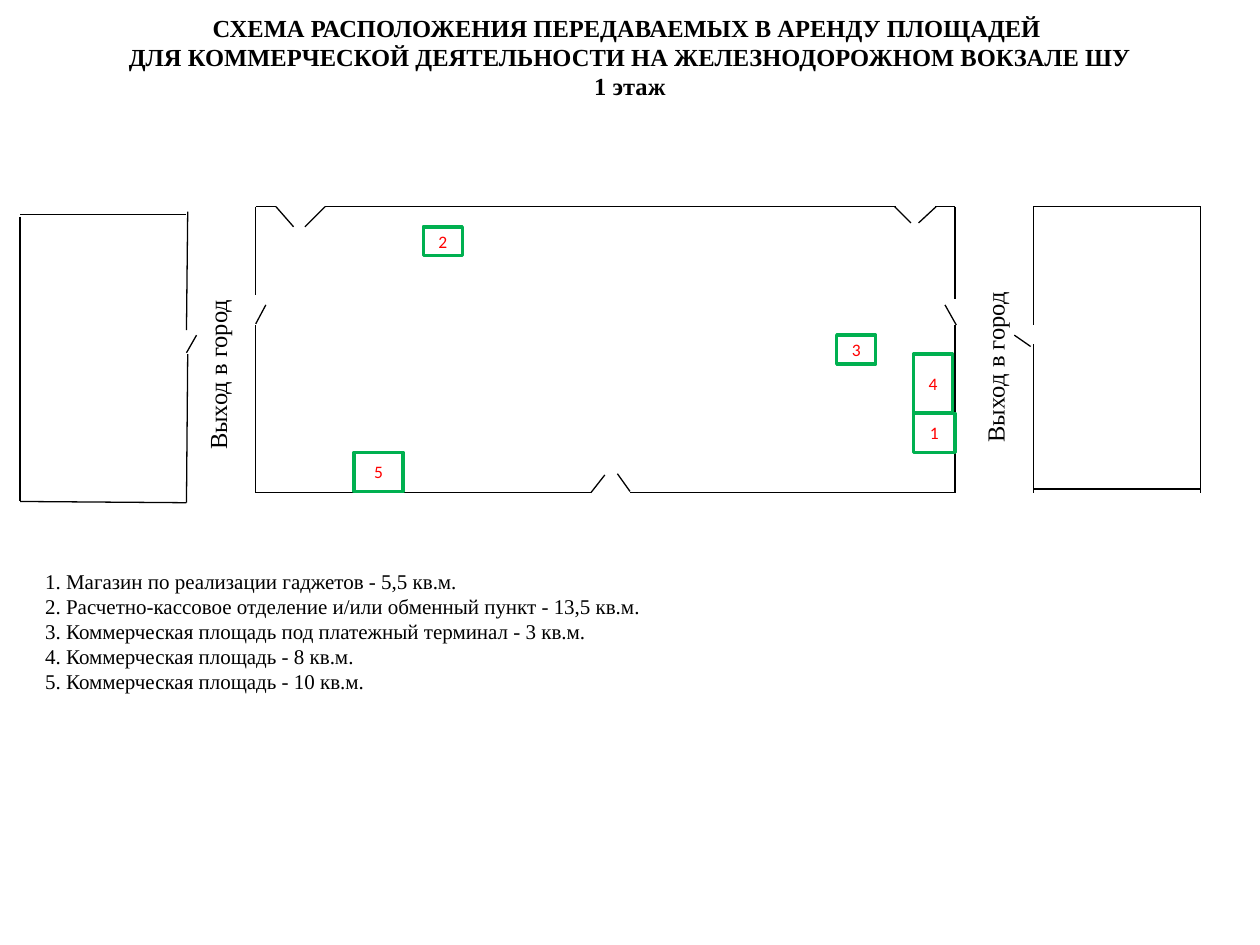
from typing import NamedTuple

from lxml import etree
from pptx import Presentation
from pptx import util as u
from pptx.dml.color import RGBColor
from pptx.enum import shapes, text
from pptx.oxml import ns

BLACK = RGBColor(0x00, 0x00, 0x00)
WHITE = RGBColor(0xFF, 0xFF, 0xFF)
GREEN = RGBColor(0x00, 0xB0, 0x50)
RED = RGBColor(0xFF, 0x00, 0x00)
SERIF = "Times New Roman"


class Wall(NamedTuple):
    x1: float
    y1: float
    x2: float
    y2: float


class Box(NamedTuple):
    left: float
    top: float
    width: float
    height: float


class Unit(NamedTuple):
    label: str
    box: Box


LEFT_ROOM = [
    Wall(0.16, 1.7, 1.48, 1.7),
    Wall(0.16, 1.72, 0.16, 3.98),
    Wall(0.16, 3.98, 1.48, 3.99),
    Wall(1.49, 1.68, 1.48, 2.62),
    Wall(1.49, 2.81, 1.48, 3.99),
    Wall(1.56, 2.66, 1.48, 2.8),
]
HALL = [
    Wall(2.03, 3.91, 4.69, 3.91),
    Wall(5, 3.91, 7.58, 3.91),
    Wall(2.03, 2.58, 2.03, 3.91),
    Wall(2.11, 2.42, 2.03, 2.57),
    Wall(2.03, 1.64, 2.03, 2.34),
    Wall(2.03, 1.64, 2.19, 1.64),
    Wall(7.58, 2.58, 7.58, 3.91),
    Wall(7.5, 2.42, 7.59, 2.58),
    Wall(7.58, 1.64, 7.58, 2.37),
    Wall(7.42, 1.64, 7.58, 1.64),
    Wall(2.33, 1.8, 2.19, 1.64),
    Wall(7.23, 1.77, 7.1, 1.64),
    Wall(2.58, 1.64, 2.42, 1.8),
    Wall(2.58, 1.64, 7.11, 1.64),
    Wall(7.29, 1.77, 7.43, 1.64),
    Wall(5, 3.9, 4.9, 3.76),
    Wall(4.69, 3.91, 4.8, 3.77),
]
RIGHT_ROOM = [
    Wall(8.2, 1.64, 9.53, 1.64),
    Wall(9.53, 1.64, 9.53, 3.91),
    Wall(8.2, 3.88, 9.53, 3.88),
    Wall(8.2, 1.64, 8.2, 2.58),
    Wall(8.2, 2.73, 8.2, 3.91),
    Wall(8.05, 2.66, 8.18, 2.75),
]
EXITS = [Box(1.56, 1.87, 0.44, 1.8), Box(7.73, 1.81, 0.44, 1.8)]
UNITS = [
    Unit("3", Box(6.64, 2.66, 0.31, 0.23)),
    Unit("1", Box(7.25, 3.28, 0.33, 0.31)),
    Unit("2", Box(3.36, 1.8, 0.31, 0.23)),
    Unit("4", Box(7.25, 2.81, 0.31, 0.47)),
    Unit("5", Box(2.81, 3.59, 0.39, 0.31)),
]
TITLE = [
    "СХЕМА РАСПОЛОЖЕНИЯ ПЕРЕДАВАЕМЫХ В АРЕНДУ ПЛОЩАДЕЙ ",
    "ДЛЯ КОММЕРЧЕСКОЙ ДЕЯТЕЛЬНОСТИ НА ЖЕЛЕЗНОДОРОЖНОМ ВОКЗАЛЕ ШУ",
    "1 этаж",
]
LEGEND = [
    "1. Магазин по реализации гаджетов - 5,5 кв.м.",
    "2. Расчетно-кассовое отделение и/или обменный пункт - 13,5 кв.м.",
    "3. Коммерческая площадь под платежный терминал - 3 кв.м.",
    "4. Коммерческая площадь - 8 кв.м.",
    "5. Коммерческая площадь - 10 кв.м.",
]


def place(box: Box) -> list:
    return [u.Inches(side) for side in box]


def write(frame, lines, size=12, font=SERIF, color=BLACK, bold=False,
          align=text.PP_ALIGN.LEFT, wrap=True) -> None:
    frame.word_wrap = wrap
    for i, line in enumerate(lines):
        para = frame.add_paragraph() if i else frame.paragraphs[0]
        para.alignment = align
        run = para.add_run()
        run.text = line
        run.font.size = u.Pt(size)
        run.font.name = font
        run.font.bold = bold
        run.font.color.rgb = color


def add_wall(slide, wall: Wall) -> None:
    line = slide.shapes.add_connector(
        shapes.MSO_CONNECTOR.STRAIGHT, *[u.Inches(end) for end in wall])
    line.line.color.rgb = BLACK
    line.line.width = u.Pt(0.75)
    etree.SubElement(line._element.spPr, ns.qn("a:effectLst"))


def add_text(slide, box: Box, lines, turned=False, **style) -> None:
    frame = slide.shapes.add_textbox(*place(box)).text_frame
    if turned:
        frame._txBody.bodyPr.set("vert", "vert270")
    write(frame, lines, **style)


def add_unit(slide, unit: Unit) -> None:
    shape = slide.shapes.add_shape(
        shapes.MSO_SHAPE.RECTANGLE, *place(unit.box))
    shape.shadow.inherit = False
    shape.fill.solid()
    shape.fill.fore_color.rgb = WHITE
    shape.line.color.rgb = GREEN
    shape.line.width = u.Pt(2)
    shape.text_frame.vertical_anchor = text.MSO_ANCHOR.MIDDLE
    write(shape.text_frame, [unit.label], size=10, font="Calibri",
          color=RED, align=text.PP_ALIGN.CENTER, wrap=False)


def main() -> None:
    deck = Presentation()
    deck.slide_width = u.Inches(10)
    deck.slide_height = u.Inches(7.5)
    slide = deck.slides.add_slide(deck.slide_layouts[6])

    for wall in LEFT_ROOM + HALL + RIGHT_ROOM:
        add_wall(slide, wall)
    for box in EXITS:
        add_text(slide, box, ["Выход в город"], turned=True, size=14)
    for unit in UNITS:
        add_unit(slide, unit)
    add_text(slide, Box(0.26, 4.46, 8.91, 1.11), LEGEND)
    add_text(slide, Box(0, 0.05, 10, 0.81), TITLE, size=14, bold=True,
             align=text.PP_ALIGN.CENTER)

    deck.save("out.pptx")


if __name__ == "__main__":
    main()
